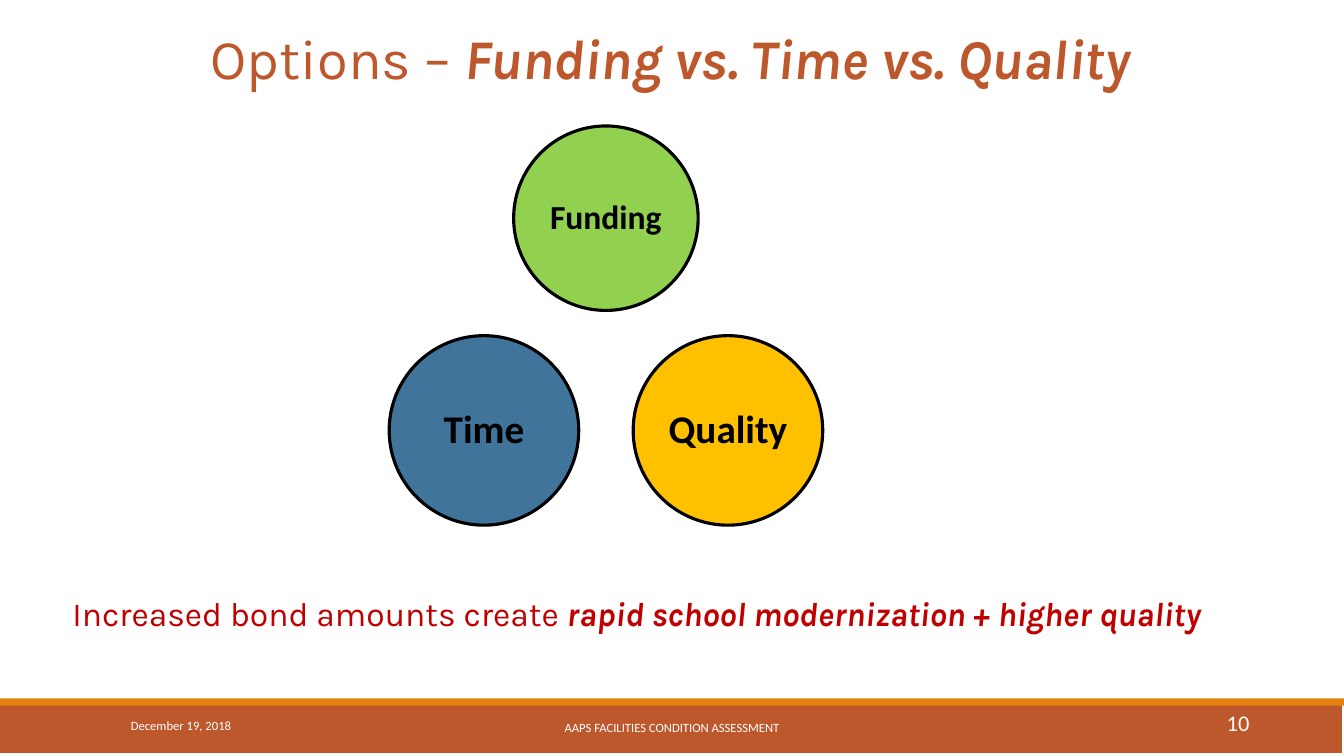
from dataclasses import dataclass

from pptx import Presentation
from pptx import util as u
from pptx.dml.color import RGBColor
from pptx.enum import shapes, text


@dataclass(frozen=True)
class Theme:
    rust: str = "BD582C"
    orange: str = "E48312"
    white: str = "FFFFFF"
    black: str = "000000"
    green: str = "92D050"
    gold: str = "FFC000"
    blue: str = "40749B"
    red: str = "C00000"
    heading_font: str = "Karla"
    body_font: str = "Calibri"
    title_size: int = 40
    message_size: int = 24
    footer_size: int = 9
    number_size: int = 16
    outline: float = 2.25


THEME = Theme()
ALIGN = text.PP_ALIGN


def write(shape, spans, *, size, color, font=THEME.body_font, align=ALIGN.LEFT,
          anchor=text.MSO_ANCHOR.MIDDLE, spacing=None, inset=None):
    """Fill a shape with one paragraph of (wording, bold, italic) spans."""
    frame = shape.text_frame
    frame.word_wrap = True
    frame.vertical_anchor = anchor
    if inset is not None:
        frame.margin_left = frame.margin_right = u.Inches(inset)
        frame.margin_top = frame.margin_bottom = u.Inches(inset)
    para = frame.paragraphs[0]
    para.alignment = align
    if spacing:
        para.line_spacing = spacing
    for wording, bold, italic in spans:
        span = para.add_run()
        span.text = wording
        span.font.name = font
        span.font.size = u.Pt(size)
        span.font.bold = bold
        span.font.italic = italic
        span.font.color.rgb = RGBColor.from_string(color)


def add_text(page, box, spans, **style):
    shape = page.shapes.add_textbox(*map(u.Inches, box))
    write(shape, spans, **style)


def add_filled(page, kind, box, fill, outline=None):
    shape = page.shapes.add_shape(kind, *map(u.Inches, box))
    shape.shadow.inherit = False
    shape.fill.solid()
    shape.fill.fore_color.rgb = RGBColor.from_string(fill)
    if outline:
        shape.line.color.rgb = RGBColor.from_string(outline)
        shape.line.width = u.Pt(THEME.outline)
    else:
        shape.line.fill.background()
    return shape


def add_title(page, box):
    add_text(page, box,
             [("Options – ", False, False), ("Funding vs. Time vs. Quality", True, True)],
             size=THEME.title_size, color=THEME.rust, font=THEME.heading_font,
             align=ALIGN.CENTER, spacing=0.85)


def add_tradeoff_circles(page, box):
    """Place one circle at the top centre and two in the lower corners."""
    left, top, width, height = box
    small, large = 1.83, 1.88
    low = top + height - large
    circles = [
        ("Funding", left + (width - small) / 2, top, small, THEME.green, 24),
        ("Quality", left + width - large, low, large, THEME.gold, 28),
        ("Time", left, low, large, THEME.blue, 28),
    ]
    for label, x, y, diameter, fill, size in circles:
        circle = add_filled(page, shapes.MSO_SHAPE.OVAL, (x, y, diameter, diameter),
                            fill, THEME.black)
        write(circle, [(label, True, False)], size=size, color=THEME.black,
              align=ALIGN.CENTER, spacing=0.9, inset=0.04)


def add_message(page, box):
    add_text(page, box,
             [("Increased bond amounts create", False, False),
              (" rapid school modernization + higher quality", True, True)],
             size=THEME.message_size, color=THEME.red, font=THEME.heading_font,
             anchor=text.MSO_ANCHOR.TOP)


def add_footer(page, box):
    left, top, width, height = box
    rectangle = shapes.MSO_SHAPE.RECTANGLE
    add_filled(page, rectangle, (left - 0.02, top + 0.04, width, height - 0.04), THEME.rust)
    add_filled(page, rectangle, (left, top, width, 0.07), THEME.orange)
    entries = [
        ("December 19, 2018", 1.2, 0.07, 2.7, ALIGN.LEFT, THEME.footer_size),
        ("AAPS FACILITIES CONDITION ASSESSMENT", 4.03, 0.09, 5.27, ALIGN.CENTER,
         THEME.footer_size),
        ("10", 11.06, 0.04, 1.43, ALIGN.RIGHT, THEME.number_size),
    ]
    for wording, x, y, entry_width, align, size in entries:
        add_text(page, (left + x, top + y, entry_width, 0.4), [(wording, False, False)],
                 size=size, color=THEME.white, align=align)


def main():
    deck = Presentation()
    deck.slide_width, deck.slide_height = u.Inches(13.33), u.Inches(7.5)
    page = deck.slides.add_slide(deck.slide_layouts[6])
    add_footer(page, (0, 6.93, 13.33, 0.54))
    add_title(page, (0.15, 0.22, 13, 0.8))
    add_tradeoff_circles(page, (3.86, 1.25, 4.3, 3.96))
    add_message(page, (0.62, 5.83, 12.85, 0.5))
    deck.save("out.pptx")


if __name__ == "__main__":
    main()
